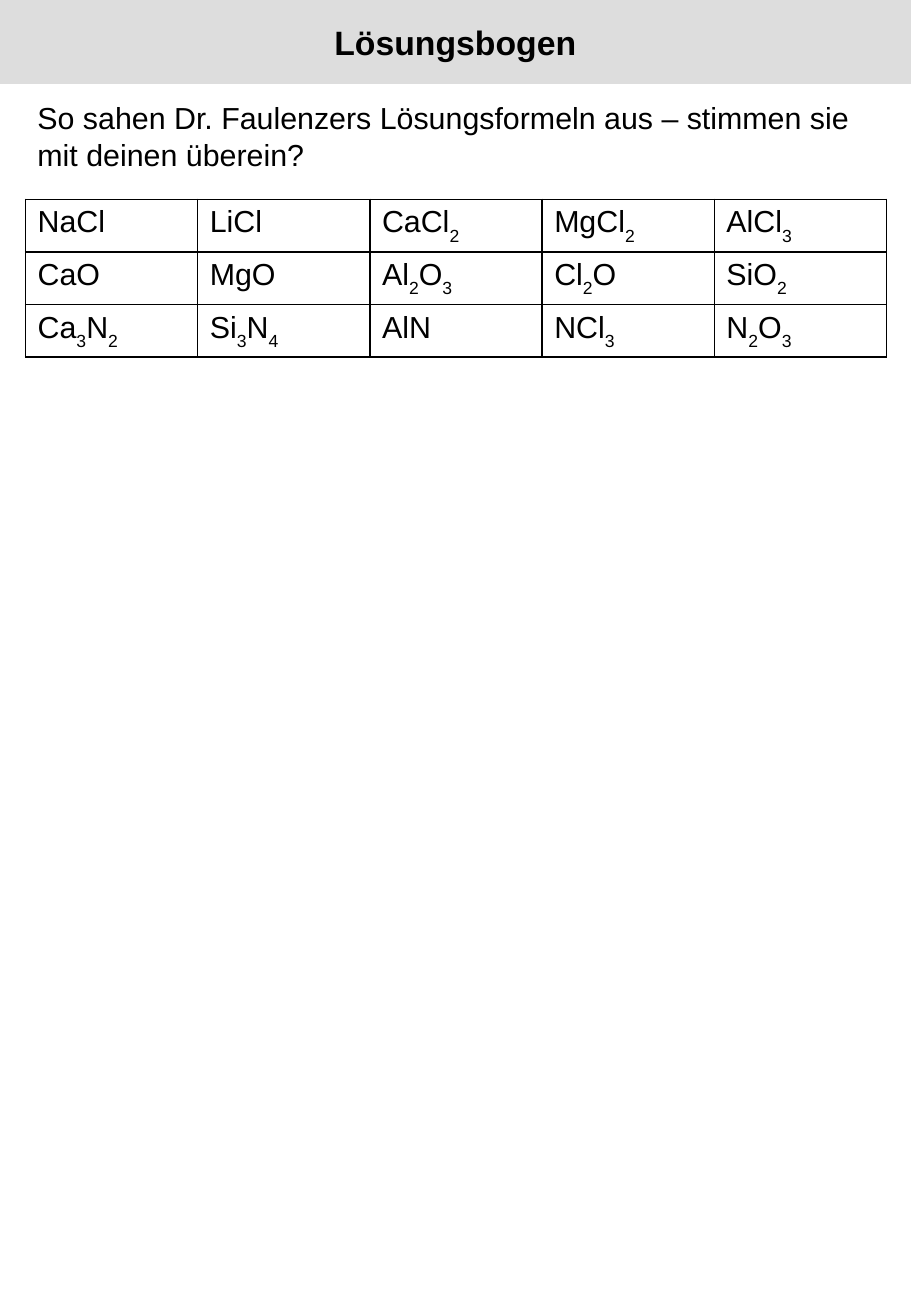
from dataclasses import dataclass
from itertools import groupby

from lxml.etree import SubElement
from pptx import Presentation
from pptx.dml.color import RGBColor
from pptx.enum.shapes import MSO_SHAPE as Shape
from pptx.enum.text import MSO_ANCHOR as Anchor, PP_ALIGN as Align
from pptx.oxml.ns import qn
from pptx.slide import Slide
from pptx.table import _Cell as Cell
from pptx.text.text import _Run as Run
from pptx.util import Inches, Pt

FONT = "Arial"
BLACK = "000000"
HEADER_GREY = "DDDDDD"
LEFT = 0.21
CONTENT_WIDTH = 7.09
ROW_HEIGHT = 0.4
FORMULAS = [
    ["NaCl", "LiCl", "CaCl2", "MgCl2", "AlCl3"],
    ["CaO", "MgO", "Al2O3", "Cl2O", "SiO2"],
    ["Ca3N2", "Si3N4", "AlN", "NCl3", "N2O3"],
]


@dataclass(frozen=True)
class TextBlock:
    text: str
    left: float
    top: float
    width: float
    height: float
    size: int
    bold: bool = False
    fill: str | None = None
    align: Align = Align.LEFT
    anchor: Anchor = Anchor.TOP


BLOCKS = [
    TextBlock("Lösungsbogen", 0, 0, 7.5, 0.69, 20, True, HEADER_GREY,
              Align.CENTER, Anchor.MIDDLE),
    TextBlock("So sahen Dr. Faulenzers Lösungsformeln aus – stimmen sie "
              "mit deinen überein?", LEFT, 0.77, CONTENT_WIDTH, 0.7, 18),
]


def rgb(value: str) -> RGBColor:
    return RGBColor.from_string(value)


def style_run(run: Run, size: int, bold: bool = False) -> None:
    run.font.name = FONT
    run.font.size = Pt(size)
    run.font.bold = bold
    run.font.color.rgb = rgb(BLACK)


def draw_block(slide: Slide, block: TextBlock) -> None:
    bounds = [Inches(n) for n in (block.left, block.top, block.width, block.height)]
    if block.fill:
        holder = slide.shapes.add_shape(Shape.RECTANGLE, *bounds)
        holder.shadow.inherit = False
        holder.fill.solid()
        holder.fill.fore_color.rgb = rgb(block.fill)
        holder.line.fill.background()
    else:
        holder = slide.shapes.add_textbox(*bounds)
    frame = holder.text_frame
    frame.word_wrap = True
    frame.vertical_anchor = block.anchor
    frame.text = block.text
    paragraph = frame.paragraphs[0]
    paragraph.alignment = block.align
    style_run(paragraph.runs[0], block.size, block.bold)


def add_borders(cell: Cell) -> None:
    properties = cell._tc.get_or_add_tcPr()
    for side in ("a:lnL", "a:lnR", "a:lnT", "a:lnB"):
        border = SubElement(properties, qn(side), w=str(Pt(1)))
        line_fill = SubElement(border, qn("a:solidFill"))
        SubElement(line_fill, qn("a:srgbClr"), val=BLACK)


def fill_formula(cell: Cell, formula: str) -> None:
    add_borders(cell)
    cell.fill.background()
    paragraph = cell.text_frame.paragraphs[0]
    for is_index, symbols in groupby(formula, str.isdigit):
        run = paragraph.add_run()
        run.text = "".join(symbols)
        style_run(run, 18)
        if is_index:
            run._r.get_or_add_rPr().set("baseline", "-30000")


def draw_formulas(slide: Slide) -> None:
    table = slide.shapes.add_table(
        len(FORMULAS), len(FORMULAS[0]), Inches(LEFT), Inches(1.64),
        Inches(CONTENT_WIDTH), Inches(ROW_HEIGHT * len(FORMULAS))).table
    table.first_row = False
    table.horz_banding = False
    for row, formulas in enumerate(FORMULAS):
        for column, formula in enumerate(formulas):
            fill_formula(table.cell(row, column), formula)


def main() -> None:
    deck = Presentation()
    deck.slide_width = Inches(7.5)
    deck.slide_height = Inches(10.83)
    slide = deck.slides.add_slide(deck.slide_layouts[6])
    header, question = BLOCKS
    draw_block(slide, header)
    draw_formulas(slide)
    draw_block(slide, question)
    deck.save("out.pptx")


if __name__ == "__main__":
    main()
